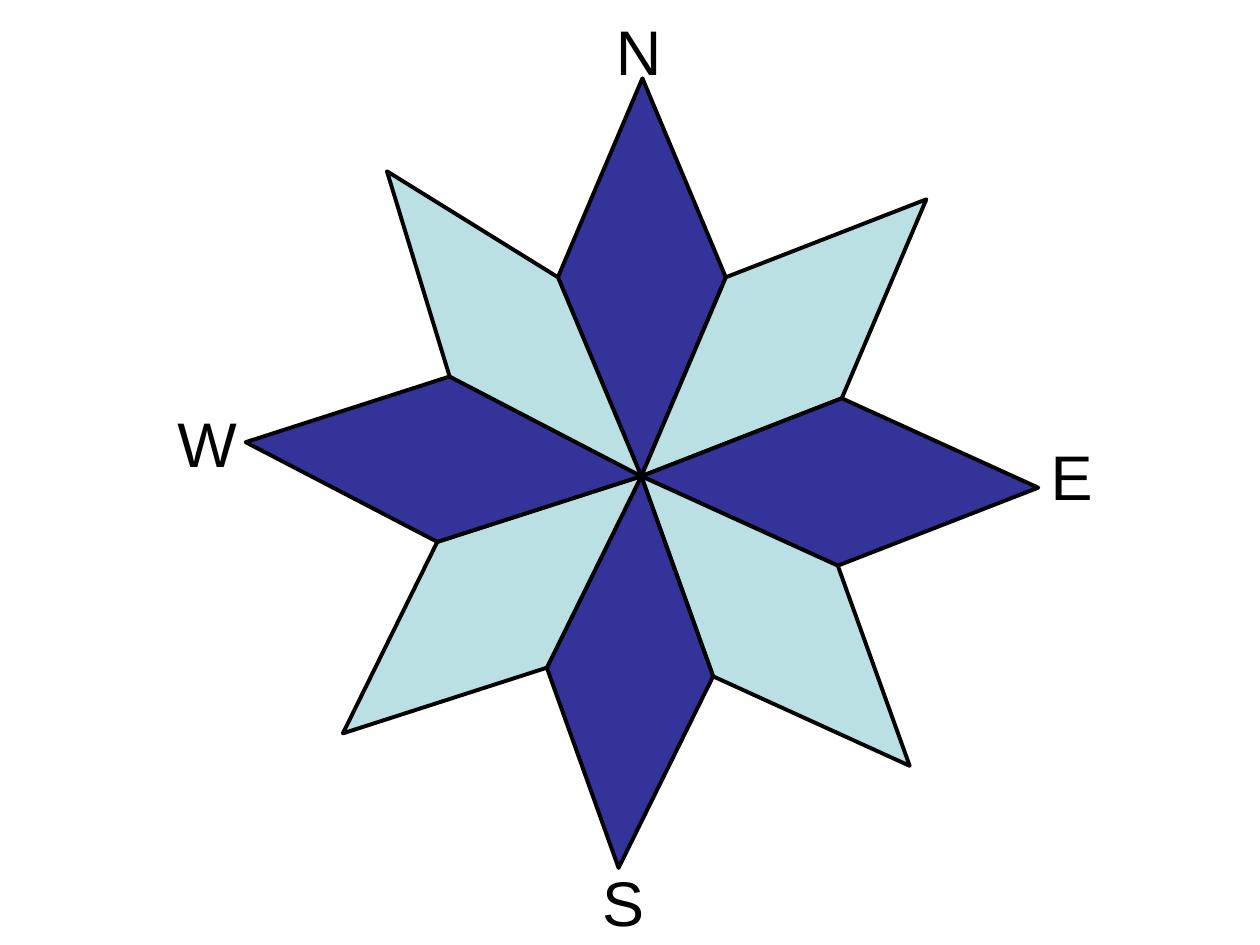
from pptx import Presentation
from pptx.dml.color import RGBColor
from pptx.enum.text import MSO_AUTO_SIZE, PP_ALIGN
from pptx.util import Inches, Pt

COLORS = {"cardinal": "333399", "diagonal": "BBE0E3", "outline": "010101", "letter": "000000"}

# The slide is a grid of 100 columns by 75 rows
CELL = Inches(0.1)
ROSE_BOX = (19.4, 6.4, 63, 62.8)  # left, top, columns, rows

# Notches between the petals, clockwise from north-north-west,
# as percent of the rose's half width and half height from its hub
NOTCHES = [
    (-21, -50.3), (21.3, -50.3), (50.5, -19.7), (49.5, 22.6),
    (18.1, 50.6), (-23.8, 48.4), (-51.4, 16.6), (-48.3, -25.2),
]
DIRECTIONS = ["N", "NE", "E", "SE", "S", "SW", "W", "NW"]
SHIFTED_TIPS = {"NW": (-64.1, -77.1)}

LETTER_SIZE = (6.4, 7.1)
LETTER_CORNERS = {"N": (47.9, 0.5), "S": (46.8, 68), "E": (82.4, 34.2), "W": (13.1, 31.6)}
LETTER_FORMAT = {"name": "Arial", "size": Pt(36)}
FRAME_FORMAT = {"word_wrap": True, "auto_size": MSO_AUTO_SIZE.SHAPE_TO_FIT_TEXT}


def color(key):
    return RGBColor.from_string(COLORS[key])


def set_format(target, values):
    for attribute, value in values.items():
        setattr(target, attribute, value)


def add_petal(slide, corners, fill_key):
    start, *others = corners
    outline = slide.shapes.build_freeform(*start)
    outline.add_line_segments(others, close=True)
    petal = outline.convert_to_shape()
    petal.shadow.inherit = False
    petal.fill.solid()
    petal.fill.fore_color.rgb = color(fill_key)
    petal.line.color.rgb = color("outline")
    petal.line.width = Pt(2.25)


def add_rose(slide, box):
    left, top, columns, rows = box

    def place(point):
        x, y = point
        return (round((left + columns / 2 * (1 + x / 100)) * CELL),
                round((top + rows / 2 * (1 + y / 100)) * CELL))

    for index, direction in enumerate(DIRECTIONS):
        # Each petal is a parallelogram spanned by two neighbouring notches
        first = NOTCHES[index]
        second = NOTCHES[(index + 1) % len(NOTCHES)]
        tip = SHIFTED_TIPS.get(direction, (first[0] + second[0], first[1] + second[1]))
        corners = [place(point) for point in (tip, second, (0, 0), first)]
        add_petal(slide, corners, "cardinal" if direction in LETTER_CORNERS else "diagonal")


def add_letter(slide, letter, box):
    label = slide.shapes.add_textbox(*(round(length * CELL) for length in box))
    set_format(label.text_frame, FRAME_FORMAT)
    paragraph = label.text_frame.paragraphs[0]
    paragraph.alignment = PP_ALIGN.LEFT
    run = paragraph.add_run()
    run.text = letter
    set_format(run.font, LETTER_FORMAT)
    run.font.color.rgb = color("letter")


def main():
    presentation = Presentation()
    presentation.slide_width = 100 * CELL
    presentation.slide_height = 75 * CELL
    slide = presentation.slides.add_slide(presentation.slide_layouts[6])

    # Compass rose
    add_rose(slide, ROSE_BOX)

    # Cardinal letters
    for letter, corner in LETTER_CORNERS.items():
        add_letter(slide, letter, corner + LETTER_SIZE)

    presentation.save("out.pptx")


if __name__ == "__main__":
    main()
